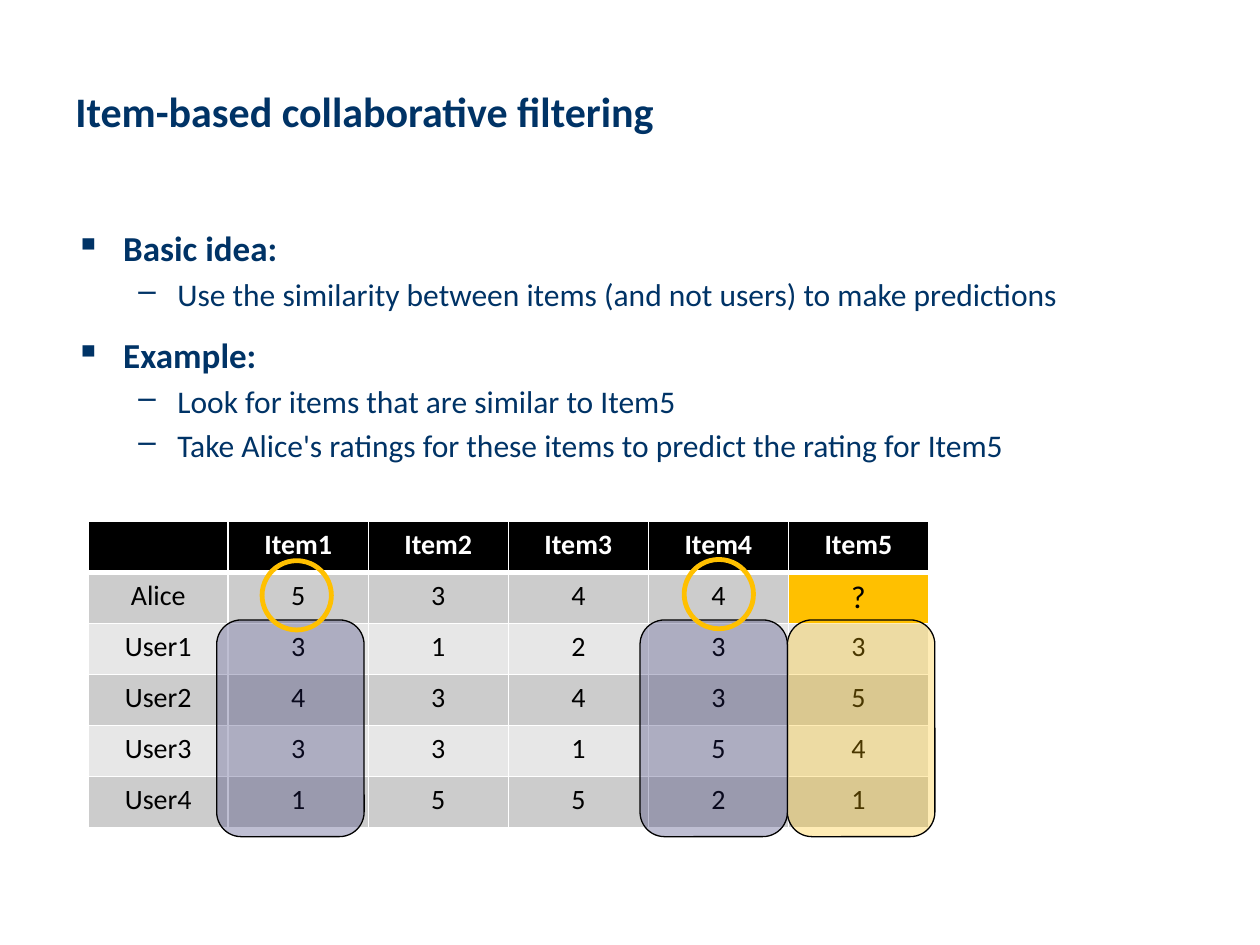
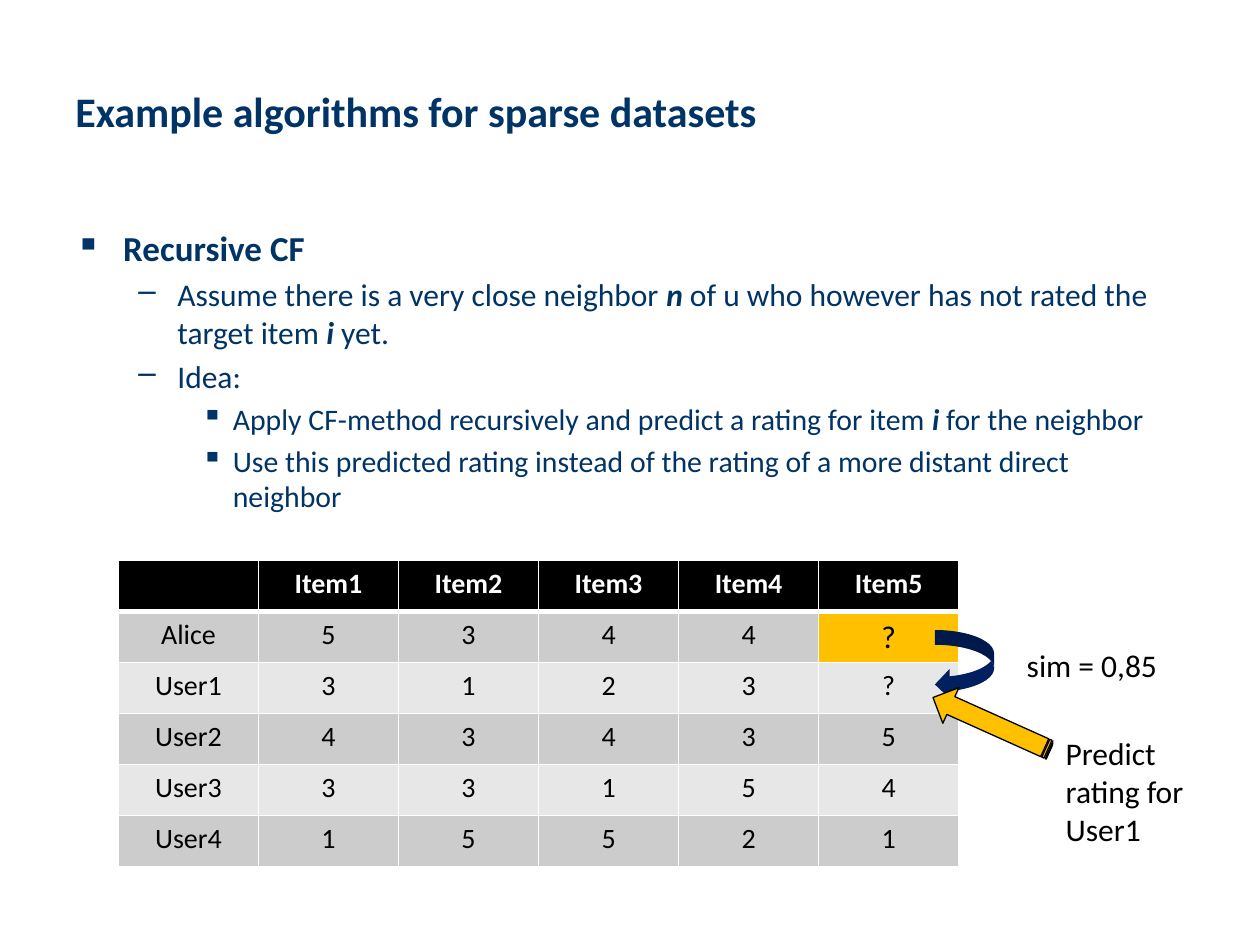
"""Builds two slides on item-based and recursive collaborative filtering."""
from dataclasses import dataclass
from typing import Optional

from lxml.etree import SubElement
from pptx import Presentation
from pptx.dml.color import RGBColor
from pptx.enum.shapes import MSO_SHAPE as Preset
from pptx.enum.text import MSO_ANCHOR as Anchor, MSO_AUTO_SIZE as AutoSize, PP_ALIGN as Align
from pptx.oxml.ns import qn
from pptx.util import Inches, Pt


@dataclass(frozen=True)
class Theme:
    font: str = "Calibri"
    heading: str = "003366"
    black: str = "000000"
    white: str = "FFFFFF"
    dark_row: str = "CCCCCC"
    light_row: str = "E7E7E7"
    gold: str = "FFC000"
    indigo: str = "222267"
    navy: str = "002060"
    title_size: int = 24
    cell_size: int = 16
    label_size: int = 18


@dataclass(frozen=True)
class Level:
    size: int
    indent: float
    hanging: float
    bullet: str
    space_before: float
    bold: bool = False


@dataclass(frozen=True)
class Mark:
    preset: Preset
    left: float
    top: float
    width: float
    height: float
    fill: Optional[str] = None
    alpha: int = 100
    line: Optional[str] = None
    line_width: float = 0.75
    rotation: float = 0


THEME = Theme()
LEVELS = (
    Level(20, 0.38, 0.38, "▪", 12, bold=True),
    Level(18, 0.81, 0.31, "–", 3.6),
    Level(17, 1.25, 0.25, "▪", 3.4),
)
HEADER = ["", "Item1", "Item2", "Item3", "Item4", "Item5"]
RATINGS = [
    ["Alice", "5", "3", "4", "4", "?"],
    ["User1", "3", "1", "2", "3", "3"],
    ["User2", "4", "3", "4", "3", "5"],
    ["User3", "3", "3", "1", "5", "4"],
    ["User4", "1", "5", "5", "2", "1"],
]
TABLE_WIDTH, TABLE_HEIGHT = 6.67, 2.43
EDGES = ("L", "R", "T", "B")


def rgb(value: str) -> RGBColor:
    return RGBColor.from_string(value)


def format_span(span, size: float, color: str, bold: bool = False, italic: bool = False) -> None:
    font = span.font
    font.name, font.size, font.bold, font.italic = THEME.font, Pt(size), bold, italic
    font.color.rgb = rgb(color)


def add_text(page, left: float, top: float, width: float, height: float, text: str,
             size: float, color: str, bold: bool = False, wrap: bool = True):
    box = page.shapes.add_textbox(Inches(left), Inches(top), Inches(width), Inches(height))
    frame = box.text_frame
    frame.text = text
    frame.word_wrap = wrap
    for para in frame.paragraphs:
        for span in para.runs:
            format_span(span, size, color, bold)
    return box


def add_title(page, text: str) -> None:
    box = add_text(page, 0.5, 0.25, 9, 1.25, text, THEME.title_size, THEME.heading, bold=True)
    box.text_frame.vertical_anchor = Anchor.MIDDLE


def add_bullets(page, items: list[tuple[int, str]]) -> None:
    """Draws an outline; words between asterisks are bold italic."""
    box = page.shapes.add_textbox(Inches(0.5), Inches(1.75), Inches(9), Inches(4.95))
    frame = box.text_frame
    frame.word_wrap = True
    for index, (depth, text) in enumerate(items):
        level = LEVELS[depth]
        para = frame.add_paragraph() if index else frame.paragraphs[0]
        para.level = depth
        para.space_before = Pt(level.space_before)
        properties = para._p.get_or_add_pPr()
        properties.set("marL", str(Inches(level.indent)))
        properties.set("indent", str(-Inches(level.hanging)))
        SubElement(properties, qn("a:buChar"), char=level.bullet)
        for part, words in enumerate(text.split("*")):
            span = para.add_run()
            span.text = words
            emphasis = part % 2 == 1
            format_span(span, level.size, THEME.heading, level.bold or emphasis, emphasis)


def set_borders(cell, bottom_width: float) -> None:
    properties = cell._tc.get_or_add_tcPr()
    for index, edge in enumerate(EDGES):
        width = bottom_width if edge == "B" else 1
        line = SubElement(properties, qn(f"a:ln{edge}"), w=str(Pt(width)))
        fill = SubElement(line, qn("a:solidFill"))
        SubElement(fill, qn("a:srgbClr"), val=THEME.white)
        properties.insert(index, line)


def add_ratings(page, left: float, top: float, ratings: list[list[str]]) -> None:
    rows = [HEADER] + ratings
    table = page.shapes.add_table(len(rows), len(HEADER), Inches(left), Inches(top),
                                  Inches(TABLE_WIDTH), Inches(TABLE_HEIGHT)).table
    for row, values in enumerate(rows):
        for column, value in enumerate(values):
            cell = table.cell(row, column)
            is_header = row == 0
            is_target = row == 1 and value == "?"
            band = THEME.dark_row if row % 2 else THEME.light_row
            cell.fill.solid()
            cell.fill.fore_color.rgb = rgb(
                THEME.black if is_header else THEME.gold if is_target else band)
            set_borders(cell, 3 if is_header else 1)
            cell.text_frame.text = value
            para = cell.text_frame.paragraphs[0]
            para.alignment = Align.CENTER
            for span in para.runs:
                format_span(span, THEME.label_size if is_target else THEME.cell_size,
                            THEME.white if is_header else THEME.black, is_header)


def add_mark(page, mark: Mark) -> None:
    shape = page.shapes.add_shape(mark.preset, Inches(mark.left), Inches(mark.top),
                                  Inches(mark.width), Inches(mark.height))
    shape.shadow.inherit = False
    shape.rotation = mark.rotation
    if mark.fill:
        shape.fill.solid()
        shape.fill.fore_color.rgb = rgb(mark.fill)
        if mark.alpha < 100:
            color = shape._element.spPr.find(qn("a:solidFill")).find(qn("a:srgbClr"))
            SubElement(color, qn("a:alpha"), val=str(mark.alpha * 1000))
    else:
        shape.fill.background()
    if mark.line:
        shape.line.color.rgb = rgb(mark.line)
        shape.line.width = Pt(mark.line_width)
    else:
        shape.line.fill.background()


def column_mark(left: float, color: str) -> Mark:
    return Mark(Preset.ROUNDED_RECTANGLE, left, 4.92, 1.17, 1.72, color, 29, THEME.black)


def rating_ring(left: float, top: float) -> Mark:
    return Mark(Preset.OVAL, left, top, 0.55, 0.55, line=THEME.gold, line_width=2.75)


def build_item_based(page) -> None:
    add_title(page, "Item-based collaborative filtering")
    add_bullets(page, [
        (0, "Basic idea:"),
        (1, "Use the similarity between items (and not users) to make predictions"),
        (0, "Example:"),
        (1, "Look for items that are similar to Item5"),
        (1, "Take Alice's ratings for these items to predict the rating for Item5"),
    ])
    add_ratings(page, 0.7, 4.14, RATINGS)
    for mark in (column_mark(6.25, THEME.gold), column_mark(1.72, THEME.indigo),
                 column_mark(5.08, THEME.indigo), rating_ring(2.08, 4.45),
                 rating_ring(5.43, 4.44)):
        add_mark(page, mark)


def build_recursive(page) -> None:
    add_title(page, "Example algorithms for sparse datasets")
    add_bullets(page, [
        (0, "Recursive CF"),
        (1, "Assume there is a very close neighbor *n* of u who however has not rated "
            "the target item *i* yet."),
        (1, "Idea:"),
        (2, "Apply CF-method recursively and predict a rating for item *i* for the neighbor"),
        (2, "Use this predicted rating instead of the rating of a more distant direct neighbor"),
    ])
    alice, user1, *others = RATINGS
    add_ratings(page, 0.94, 4.45, [alice, user1[:-1] + ["?"], *others])
    add_mark(page, Mark(Preset.CURVED_LEFT_ARROW, 7.42, 5, 0.47, 0.55, THEME.navy))
    similarity = add_text(page, 8.05, 5.08, 1.25, 0.4, "sim = 0,85",
                          THEME.label_size, THEME.black, wrap=False)
    add_mark(page, Mark(Preset.STRIPED_RIGHT_ARROW, 7.36, 5.59, 1.02, 0.31, THEME.gold,
                        line=THEME.black, rotation=204.2))
    prediction = add_text(page, 8.36, 5.78, 1.33, 1.01, "Predict rating for\nUser1",
                          THEME.label_size, THEME.black)
    prediction.fill.solid()
    prediction.fill.fore_color.rgb = rgb(THEME.white)
    for box in (similarity, prediction):
        box.text_frame.auto_size = AutoSize.SHAPE_TO_FIT_TEXT


def main() -> None:
    deck = Presentation()
    deck.slide_width, deck.slide_height = Inches(10), Inches(7.5)
    for build in (build_item_based, build_recursive):
        build(deck.slides.add_slide(deck.slide_layouts[6]))
    deck.save("out.pptx")


if __name__ == "__main__":
    main()
